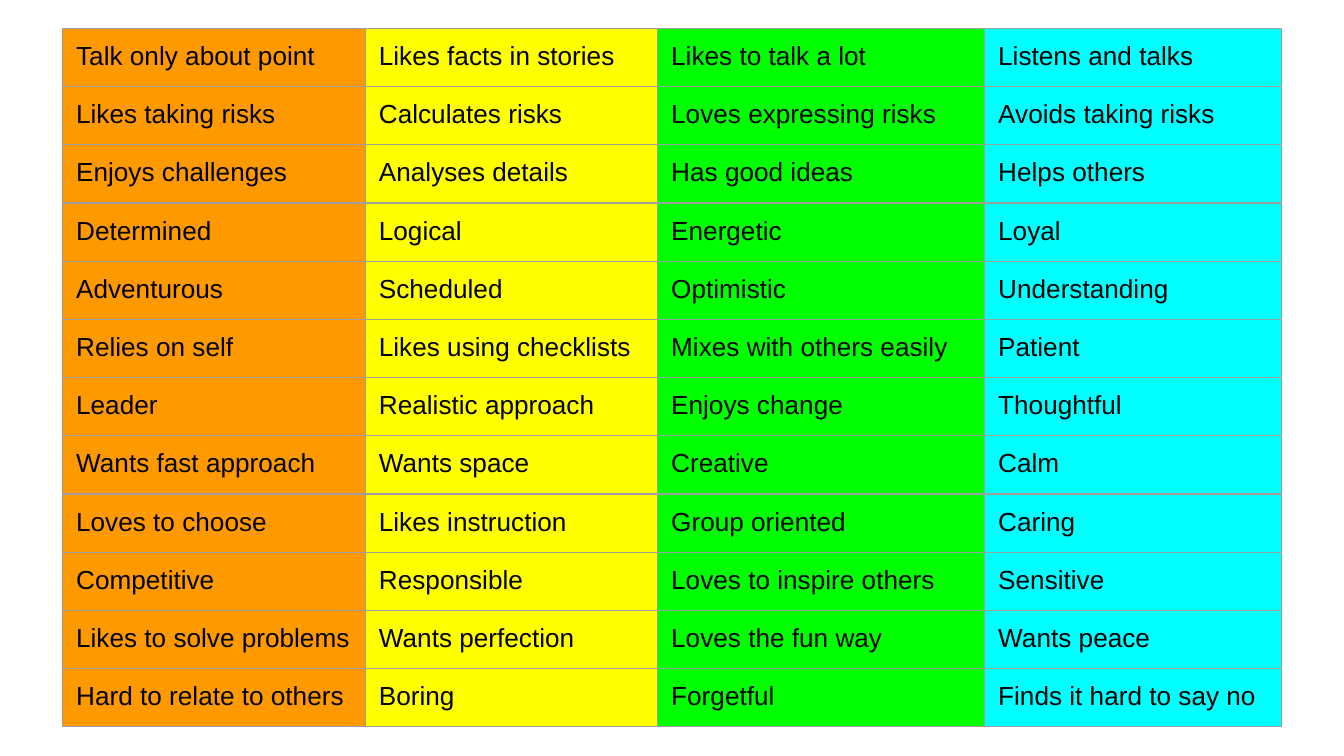
from lxml import etree
from pptx import Presentation
from pptx.dml.color import RGBColor
from pptx.oxml.ns import qn
from pptx.util import Pt

FONT = "Arial"
TEXT_COLOR = "000000"
BORDER_COLOR = "9E9E9E"
BORDER_WIDTH = 0.75
INSET = 7.2
LEFT, TOP = 33.6, 15.2
ROW_HEIGHT = 31.2
COLUMN_WIDTHS = [162.2, 156.6, 175.2, 159.1]
COLUMN_FILLS = ["FF9900", "FFFF00", "00FF00", "00FFFF"]

TRAITS = [
    ["Talk only about point", "Likes facts in stories", "Likes to talk a lot", "Listens and talks"],
    ["Likes taking risks", "Calculates risks", "Loves expressing risks", "Avoids taking risks"],
    ["Enjoys challenges", "Analyses details", "Has good ideas", "Helps others"],
    ["Determined", "Logical", "Energetic", "Loyal"],
    ["Adventurous", "Scheduled", "Optimistic", "Understanding"],
    ["Relies on self", "Likes using checklists", "Mixes with others easily", "Patient"],
    ["Leader", "Realistic approach", "Enjoys change", "Thoughtful"],
    ["Wants fast approach", "Wants space", "Creative", "Calm"],
    ["Loves to choose", "Likes instruction", "Group oriented", "Caring"],
    ["Competitive", "Responsible", "Loves to inspire others", "Sensitive"],
    ["Likes to solve problems", "Wants perfection", "Loves the fun way", "Wants peace"],
    ["Hard to relate to others", "Boring", "Forgetful", "Finds it hard to say no"],
]


def color(hex_string):
    return RGBColor.from_string(hex_string)


def add_borders(cell):
    """Outline all four sides; call before the fill, which must follow in the XML."""
    tc_pr = cell._tc.get_or_add_tcPr()
    for side in ("a:lnL", "a:lnR", "a:lnT", "a:lnB"):
        ln = etree.SubElement(tc_pr, qn(side), w=str(Pt(BORDER_WIDTH)))
        fill = etree.SubElement(ln, qn("a:solidFill"))
        etree.SubElement(fill, qn("a:srgbClr"), val=BORDER_COLOR)


def fill_cell(cell, text, fill):
    add_borders(cell)
    cell.fill.solid()
    cell.fill.fore_color.rgb = color(fill)
    cell.margin_left = cell.margin_right = Pt(INSET)
    cell.margin_top = cell.margin_bottom = Pt(INSET)
    cell.text = text
    font = cell.text_frame.paragraphs[0].font
    font.name = FONT
    font.size = Pt(14)
    font.color.rgb = color(TEXT_COLOR)


def add_trait_table(s):
    frame = s.shapes.add_table(
        len(TRAITS), len(COLUMN_WIDTHS), Pt(LEFT), Pt(TOP),
        Pt(sum(COLUMN_WIDTHS)), Pt(ROW_HEIGHT * len(TRAITS)))
    table = frame.table
    table.first_row = False
    table.horz_banding = False
    for column, width in zip(table.columns, COLUMN_WIDTHS):
        column.width = Pt(width)
    for row, traits in zip(table.rows, TRAITS):
        row.height = Pt(ROW_HEIGHT)
        for cell, text, fill in zip(row.cells, traits, COLUMN_FILLS):
            fill_cell(cell, text, fill)


def main():
    prs = Presentation()
    prs.slide_width, prs.slide_height = Pt(720), Pt(405)
    s = prs.slides.add_slide(prs.slide_layouts[6])
    add_trait_table(s)
    prs.save("out.pptx")


if __name__ == "__main__":
    main()
